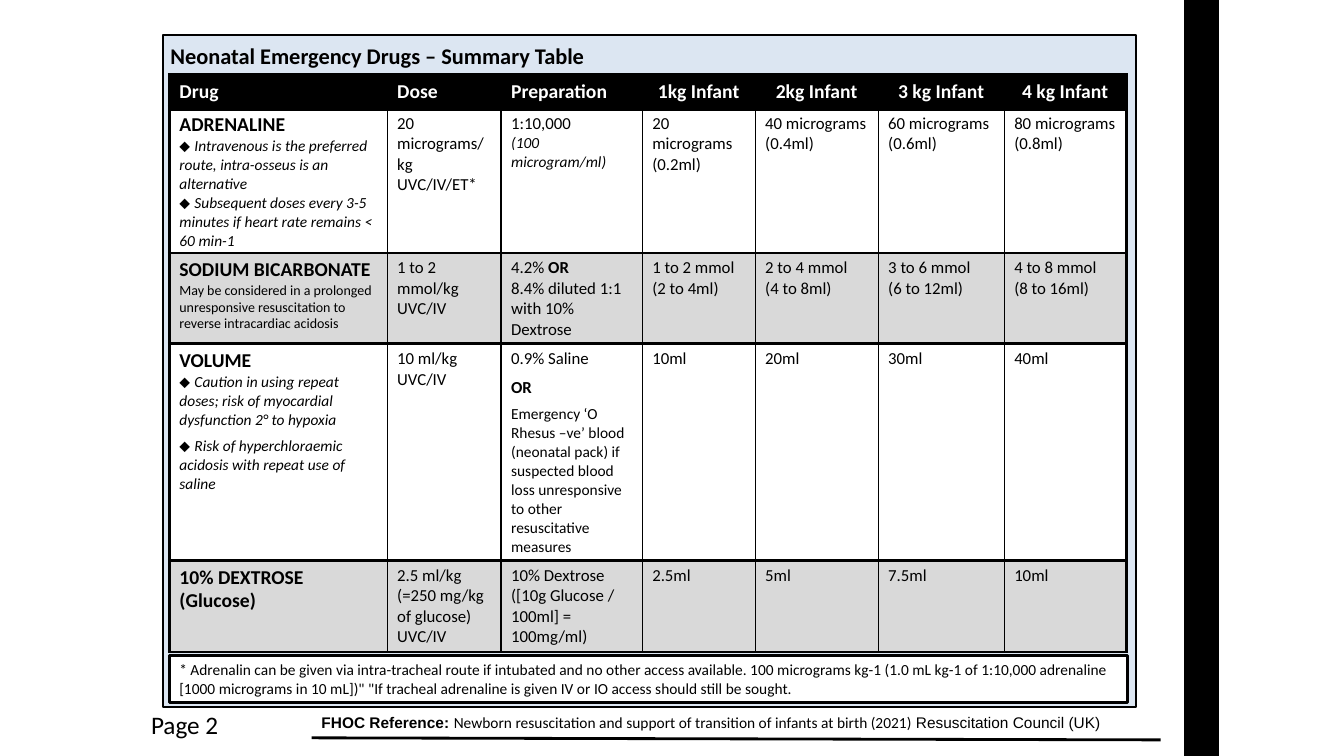
from dataclasses import dataclass

from lxml.etree import SubElement
from pptx import Presentation
from pptx.dml.color import RGBColor
from pptx.enum.shapes import MSO_CONNECTOR, MSO_SHAPE
from pptx.enum.text import MSO_ANCHOR, MSO_AUTO_SIZE, PP_ALIGN
from pptx.oxml.ns import qn
from pptx.util import Inches, Pt

WIDTH, HEIGHT = 13.33, 7.5


@dataclass(frozen=True)
class Style:
    size: int
    bold: bool = False
    italic: bool = False
    font: str = "Calibri"
    color: str = "000000"


@dataclass(frozen=True)
class Line:
    pieces: tuple
    gap: int = 0


class Theme:
    black = "000000"
    white = "FFFFFF"
    panel = "DCE6F2"
    band = "D9D9D9"
    thin, medium, heavy = 1, 2.25, 4.5
    title = Style(16, bold=True)
    page = Style(18)
    header = Style(14, bold=True, color="FFFFFF")
    drug = Style(14, bold=True)
    dose = Style(12)
    strong = Style(12, bold=True)
    note = Style(11)
    remark = Style(11, italic=True)
    marker = Style(11, italic=True, font="Arial")
    small = Style(10)
    source = Style(11, font="Arial")
    source_label = Style(11, bold=True, font="Arial")


def line(text, style=Theme.dose, gap=0):
    return Line(((text, style),), gap)


def lines(*texts):
    return [line(text) for text in texts]


def bullet(text, gap=0):
    return Line((("⬥ ", Theme.marker), (text, Theme.remark)), gap)


COLUMNS = [2.16, 1.13, 1.4, 1.12, 1.22, 1.25, 1.21]
ROWS = [0.33, 1.42, 0.89, 2.15, 0.91]
HEADINGS = ["Drug", "Dose", "Preparation", "1kg Infant", "2kg Infant", "3 kg Infant", "4 kg Infant"]
DRUGS = [
    [
        [line("ADRENALINE", Theme.drug),
         bullet("Intravenous is the preferred route, intra-osseus is an alternative"),
         bullet("Subsequent doses every 3-5 minutes if heart rate remains < 60 min-1")],
        lines("20 micrograms/kg UVC/IV/ET*"),
        [line("1:10,000"), line("(100 microgram/ml)", Theme.remark)],
        lines("20 micrograms", "(0.2ml)"),
        lines("40 micrograms", "(0.4ml)"),
        lines("60 micrograms", "(0.6ml)"),
        lines("80 micrograms", "(0.8ml)"),
    ],
    [
        [line("SODIUM BICARBONATE", Theme.drug),
         line("May be considered in a prolonged unresponsive resuscitation "
              "to reverse intracardiac acidosis", Theme.small)],
        lines("1 to 2 mmol/kg", "UVC/IV"),
        [Line((("4.2% ", Theme.dose), ("OR", Theme.strong))),
         line("8.4% diluted 1:1 with 10% Dextrose")],
        lines("1 to 2 mmol", "(2 to 4ml)"),
        lines("2 to 4 mmol", "(4 to 8ml)"),
        lines("3 to 6 mmol", "(6 to 12ml)"),
        lines("4 to 8 mmol", "(8 to 16ml)"),
    ],
    [
        [line("VOLUME", Theme.drug),
         bullet("Caution in using repeat doses; risk of myocardial dysfunction 2° to hypoxia"),
         bullet("Risk of hyperchloraemic acidosis with repeat use of saline", gap=5)],
        lines("10 ml/kg", "UVC/IV"),
        [line("0.9% Saline"),
         line("OR", Theme.strong, gap=6),
         line("Emergency ‘O Rhesus –ve’ blood (neonatal pack) if suspected blood loss "
              "unresponsive to other resuscitative measures", Theme.note, gap=5)],
        lines("10ml"), lines("20ml"), lines("30ml"), lines("40ml"),
    ],
    [
        [line("10% DEXTROSE (Glucose)", Theme.drug)],
        lines("2.5 ml/kg", "(=250 mg/kg of glucose)", "UVC/IV"),
        lines("10% Dextrose ([10g Glucose / 100ml] = 100mg/ml)"),
        lines("2.5ml"), lines("5ml"), lines("7.5ml"), lines("10ml"),
    ],
]
FOOTNOTE = (
    "* Adrenalin can be given via intra-tracheal route if intubated and no other access available. "
    "100 micrograms kg-1 (1.0 mL kg-1 of 1:10,000 adrenaline [1000 micrograms in 10 mL])\" "
    "\"If tracheal adrenaline is given IV or IO access should still be sought."
)
REFERENCE = Line((
    ("FHOC Reference: ", Theme.source_label),
    ("Newborn resuscitation and support of transition of infants at birth (2021) ", Theme.note),
    ("Resuscitation Council (UK)", Theme.source),
))


def across(percent):
    return Inches(WIDTH * percent / 100)


def down(percent):
    return Inches(HEIGHT * percent / 100)


def area(left, top, width, height):
    return across(left), down(top), across(width), down(height)


def apply_style(font, style):
    font.size = Pt(style.size)
    font.name = style.font
    font.bold = style.bold
    font.italic = style.italic
    font.color.rgb = RGBColor.from_string(style.color)


def write(text_frame, content, alignment=PP_ALIGN.LEFT, wrap=True):
    text_frame.word_wrap = wrap
    for index, entry in enumerate(content):
        paragraph = text_frame.add_paragraph() if index else text_frame.paragraphs[0]
        paragraph.alignment = alignment
        if entry.gap:
            paragraph.space_before = Pt(entry.gap)
        for text, style in entry.pieces:
            run = paragraph.add_run()
            run.text = text
            if len(entry.pieces) > 1:
                apply_style(run.font, style)
        if len(entry.pieces) == 1:
            apply_style(paragraph.font, entry.pieces[0][1])


def add_box(slide, place, fill, weight):
    shape = slide.shapes.add_shape(MSO_SHAPE.RECTANGLE, *place)
    shape.shadow.inherit = False
    shape.fill.solid()
    shape.fill.fore_color.rgb = RGBColor.from_string(fill)
    shape.line.color.rgb = RGBColor.from_string(Theme.black)
    shape.line.width = Pt(weight)
    return shape


def add_label(slide, place, entry, wrap=True):
    write(slide.shapes.add_textbox(*place).text_frame, [entry], wrap=wrap)


def add_rule(slide, start, end, weight):
    connector = slide.shapes.add_connector(
        MSO_CONNECTOR.STRAIGHT, across(start[0]), down(start[1]), across(end[0]), down(end[1]))
    connector.line.color.rgb = RGBColor.from_string(Theme.black)
    connector.line.width = Pt(weight)
    SubElement(connector.element.spPr, qn("a:effectLst"))


def set_title(slide, panel, place):
    title = slide.shapes.title
    panel.element.addnext(title.element)
    title.left, title.top, title.width, title.height = place
    write(title.text_frame, [line("Neonatal Emergency Drugs – Summary Table", Theme.title)], wrap=False)
    title.text_frame.auto_size = MSO_AUTO_SIZE.NONE
    title.text_frame.vertical_anchor = MSO_ANCHOR.TOP


def set_borders(cell, **weights):
    properties = cell._tc.get_or_add_tcPr()
    for side in "LRTB":
        border = SubElement(properties, qn(f"a:ln{side}"), w=str(Pt(weights[side])))
        SubElement(SubElement(border, qn("a:solidFill")), qn("a:srgbClr"), val=Theme.black)


def add_drug_table(slide, place):
    table = slide.shapes.add_table(len(ROWS), len(COLUMNS), *place).table
    table.first_row = table.horz_banding = False
    for column, share in zip(table.columns, COLUMNS):
        column.width = int(place[2] * share / sum(COLUMNS))
    for row, share in zip(table.rows, ROWS):
        row.height = int(place[3] * share / sum(ROWS))
    content = [[[line(heading, Theme.header)] for heading in HEADINGS]] + DRUGS
    last = len(COLUMNS) - 1
    for row, entries in enumerate(content):
        fill = Theme.black if row == 0 else Theme.white if row % 2 else Theme.band
        for column, entry in enumerate(entries):
            cell = table.cell(row, column)
            set_borders(
                cell,
                L=Theme.thin if column else Theme.medium,
                R=Theme.thin if column < last else Theme.medium,
                T=Theme.heavy if row == 1 else Theme.medium,
                B=Theme.medium if row else Theme.heavy)
            cell.fill.solid()
            cell.fill.fore_color.rgb = RGBColor.from_string(fill)
            centred = row == 0 and column > 2
            write(cell.text_frame, entry, PP_ALIGN.CENTER if centred else PP_ALIGN.LEFT)


def main():
    presentation = Presentation()
    presentation.slide_width, presentation.slide_height = Inches(WIDTH), Inches(HEIGHT)
    slide = presentation.slides.add_slide(presentation.slide_layouts[5])
    panel = add_box(slide, area(12.15, 4.67, 72.4, 88.8), Theme.panel, 1.5)
    set_title(slide, panel, area(11.93, 4.93, 32.86, 4.93))
    add_label(slide, area(10.5, 93.2, 6.6, 5.33), line("Page 2", Theme.page), wrap=False)
    add_rule(slide, (89.42, 0), (89.42, 100), 25)
    add_drug_table(slide, area(12.6, 9.87, 71.2, 76))
    footnote = add_box(slide, area(12.6, 86.67, 71.27, 6.27), Theme.white, Theme.medium)
    write(footnote.text_frame, [line(FOOTNOTE, Theme.note)])
    add_label(slide, area(23.18, 93.73, 60.84, 3.87), REFERENCE)
    add_rule(slide, (23.18, 97.6), (86.35, 97.87), 2)
    presentation.save("out.pptx")


if __name__ == "__main__":
    main()
